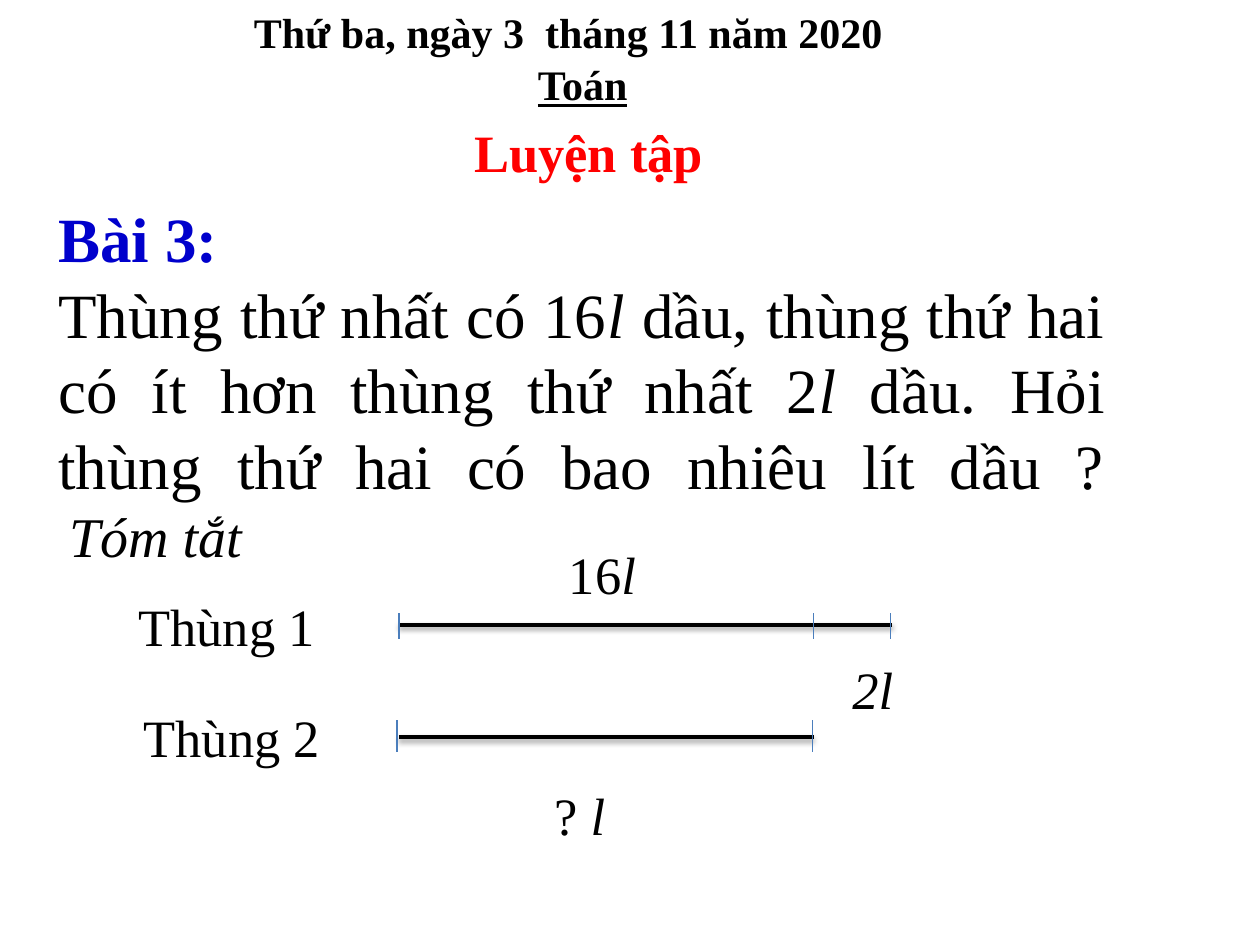
from lxml.etree import SubElement
from pptx import Presentation
from pptx.dml.color import RGBColor
from pptx.enum.shapes import MSO_CONNECTOR
from pptx.enum.text import MSO_AUTO_SIZE, PP_ALIGN
from pptx.oxml.ns import qn
from pptx.util import Inches, Pt

COLS, ROWS = 120, 90
CELL = Inches(10) // COLS
FONT = "Times New Roman"
BLACK, RED, BLUE, TICK = "000000", "FF0000", "0000CC", "4B7EBC"


def rgb(value):
    """Turn a hex string into a colour."""
    return RGBColor.from_string(value)


def grid(*cells):
    """Convert grid cells to lengths."""
    return [round(n * CELL) for n in cells]


def add_runs(p, text, size=30, color=BLACK, bold=False, italic=False,
             underline=False, align=PP_ALIGN.LEFT):
    """Fill a paragraph, switching italics at each asterisk."""
    p.alignment = align
    for i, part in enumerate(text.split("*")):
        if part:
            r = p.add_run()
            r.text = part
            f = r.font
            f.name, f.size, f.bold = FONT, Pt(size), bold
            f.italic = italic != bool(i % 2)
            f.underline = underline
            f.color.rgb = rgb(color)


def add_text(s, box, text, **fmt):
    """Place a wrapped text box and return its text frame."""
    tf = s.shapes.add_textbox(*grid(*box)).text_frame
    tf.word_wrap = True
    tf.auto_size = MSO_AUTO_SIZE.SHAPE_TO_FIT_TEXT
    add_runs(tf.paragraphs[0], text, **fmt)
    return tf


def add_line(group, ends, color, width, shadow=False):
    """Draw a straight line, with a soft shadow below it if asked."""
    sp = group.shapes.add_connector(MSO_CONNECTOR.STRAIGHT, *grid(*ends))
    sp.line.color.rgb = rgb(color)
    sp.line.width = Pt(width)
    effects = SubElement(sp._element.spPr, qn("a:effectLst"))
    if shadow:
        outer = SubElement(effects, qn("a:outerShdw"), blurRad=str(Pt(3.1)),
                           dist=str(Pt(1.6)), dir="5400000", rotWithShape="0")
        clr = SubElement(outer, qn("a:srgbClr"), val=BLACK)
        SubElement(clr, qn("a:alpha"), val="38000")


def add_heading(s, x, y):
    """Place the date, subject and lesson title."""
    add_text(s, (x + 13, y + 5, 39, 6), "Toán", size=24, bold=True,
             underline=True, align=PP_ALIGN.CENTER)
    add_text(s, (x, y, 75, 6), "Thứ ba, ngày 3  tháng 11 năm 2020",
             size=24, bold=True)
    add_text(s, (x + 21, y + 10.8, 31, 7.3), "Luyện tập", color=RED, bold=True)


def add_problem(s, box):
    """Place the exercise number and its justified wording."""
    tf = add_text(s, box, "Bài 3:", size=36, color=BLUE, bold=True)
    p = tf.add_paragraph()
    add_runs(p, "Thùng thứ nhất có 16*l *dầu, thùng thứ hai có ít hơn thùng "
             "thứ nhất 2*l *dầu. Hỏi thùng thứ hai có bao nhiêu lít dầu ?",
             size=36, align=PP_ALIGN.JUSTIFY)
    p.add_line_break()


def add_bar(s, x, y, length, ticks, tick_top, tick_height):
    """Draw a grouped measuring bar with ticks at offsets along it."""
    group = s.shapes.add_group_shape()
    add_line(group, (x, y, x + length, y), BLACK, 2, shadow=True)
    for tick in ticks:
        top = y + tick_top
        add_line(group, (x + tick, top, x + tick, top + tick_height),
                 TICK, 0.75)


def add_summary(s, x, y):
    """Place the summary diagram with its two bars and labels."""
    add_text(s, (x, y, 24.5, 7.7), "Tóm tắt", size=32, italic=True)
    add_bar(s, x + 32.6, y + 12.3, 47, (0, 39.5, 46.8), -1.1, 2.5)
    add_bar(s, x + 32.6, y + 23, 39.5, (-0.2, 39.4), -1.6, 3)
    labels = [
        (6.6, 8.8, 20, "Thùng 1"),
        (7.1, 19.4, 20, "Thùng 2"),
        (47.6, 3.8, 10, "16*l*"),
        (74.6, 14.8, 20, "*2l*"),
        (46.2, 26.8, 17, "? *l*"),
    ]
    for dx, dy, width, text in labels:
        add_text(s, (x + dx, y + dy, width, 7.3), text)


def main():
    """Build and save the slide."""
    prs = Presentation()
    prs.slide_width, prs.slide_height = grid(COLS, ROWS)
    s = prs.slides.add_slide(prs.slide_layouts[6])
    add_heading(s, 23, 0)
    add_problem(s, (4.4, 18.4, 102, 37.6))
    add_summary(s, 5.4, 47.2)
    prs.save("out.pptx")


if __name__ == "__main__":
    main()
